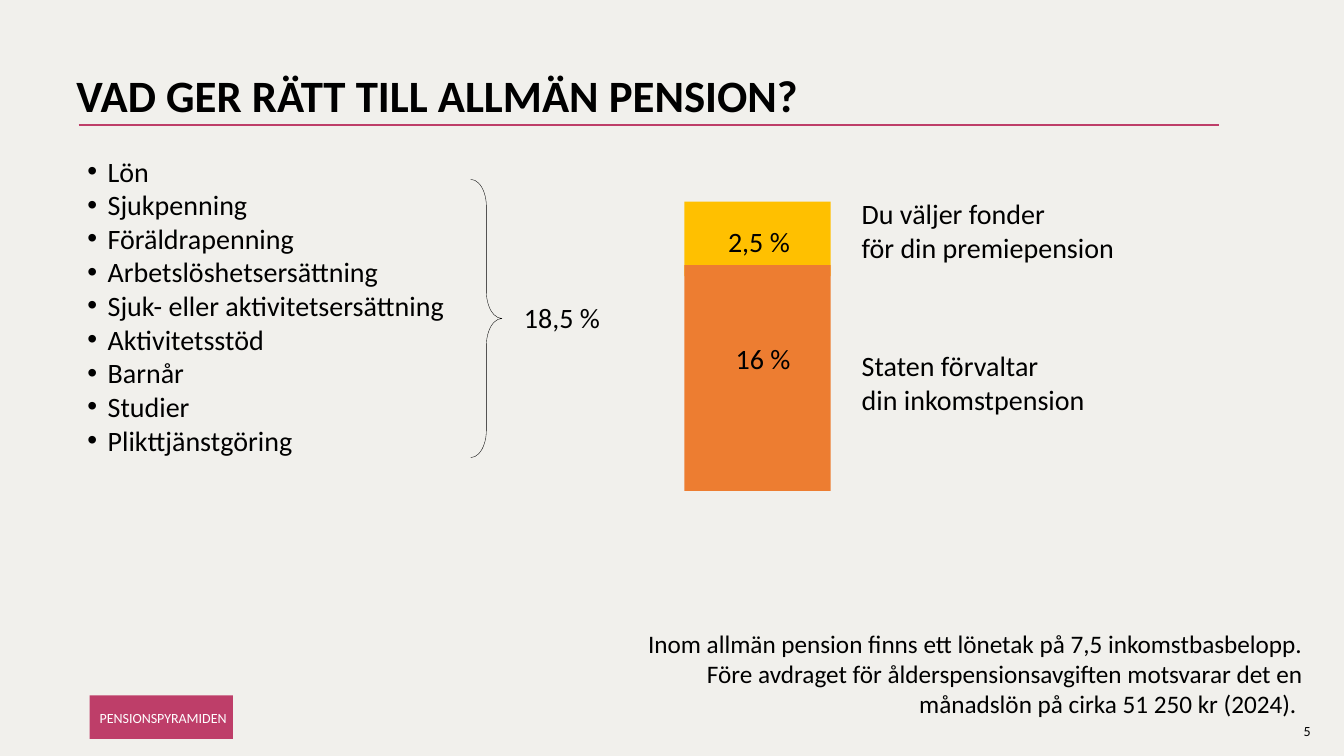
"""Build the slide on what earns a right to the public pension."""
from dataclasses import dataclass

from lxml import etree
from pptx import Presentation
from pptx.dml.color import RGBColor
from pptx.enum.shapes import MSO_CONNECTOR, MSO_SHAPE
from pptx.enum.text import MSO_ANCHOR, PP_ALIGN
from pptx.oxml.ns import qn
from pptx.util import Inches, Pt

LEFT, CENTER, RIGHT = PP_ALIGN.LEFT, PP_ALIGN.CENTER, PP_ALIGN.RIGHT
TOP, MIDDLE = MSO_ANCHOR.TOP, MSO_ANCHOR.MIDDLE
RECTANGLE, BRACE = MSO_SHAPE.RECTANGLE, MSO_SHAPE.RIGHT_BRACE
STRAIGHT = MSO_CONNECTOR.STRAIGHT

WIDTH, HEIGHT = Inches(13.33), Inches(7.5)
COLUMN, ROW = WIDTH / 40, HEIGHT / 30
BULLET_INDENT = Inches(0.2)


@dataclass(frozen=True)
class Theme:
    """Colours, font and type sizes of the slide."""

    font: str = "Calibri"
    background: str = "F1F0EC"
    ink: str = "000000"
    light: str = "FFFFFF"
    accent: str = "BE3E69"
    premium: str = "FFC000"
    income: str = "ED7D31"
    title: int = 32
    body: int = 20
    note: int = 18
    small: int = 10


THEME = Theme()

INCOME_SOURCES = (
    "Lön",
    "Sjukpenning",
    "Föräldrapenning",
    "Arbetslöshetsersättning",
    "Sjuk- eller aktivitetsersättning",
    "Aktivitetsstöd",
    "Barnår",
    "Studier",
    "Plikttjänstgöring",
)
PENSION_PARTS = (
    (THEME.premium, (20.37, 8, 4.35, 2.96)),
    (THEME.income, (20.37, 10.52, 4.35, 8.96)),
)
PART_CAPTIONS = (
    (("Du väljer fonder", "för din premiepension"), (25.35, 7.6, 9.48, 3.08)),
    (("Staten förvaltar", "din inkomstpension"), (25.35, 13.64, 10.05, 3.08)),
)
PART_SHARES = (
    ("2,5 %", (20.82, 8.72, 3.54, 1.76)),
    ("16 %", (20.82, 13.36, 3.78, 1.76)),
)
SALARY_CAP = (
    "Inom allmän pension finns ett lönetak på 7,5 inkomstbasbelopp. "
    "Före avdraget för ålderspensionsavgiften motsvarar det en "
    "månadslön på cirka 51 250 kr (2024). "
)


def place(area):
    """Turn columns and rows into slide lengths."""
    left, top, width, height = area
    return (round(left * COLUMN), round(top * ROW),
            round(width * COLUMN), round(height * ROW))


def apply(target, values):
    """Set every named format value on the target."""
    for name, value in values.items():
        setattr(target, name, value)


def add_bullet(paragraph):
    """Give the paragraph a hanging bullet."""
    properties = paragraph._p.get_or_add_pPr()
    properties.set("marL", str(BULLET_INDENT))
    properties.set("indent", str(-BULLET_INDENT))
    etree.SubElement(properties, qn("a:buFont")).set("typeface", "Arial")
    etree.SubElement(properties, qn("a:buChar")).set("char", "•")


def write(frame, lines, size=THEME.body, color=THEME.ink, bold=False,
          align=LEFT, spacing=1.0, bulleted=False):
    """Write one paragraph for each line of text."""
    for index, line in enumerate(lines):
        paragraph = frame.add_paragraph() if index else frame.paragraphs[0]
        if bulleted:
            add_bullet(paragraph)
        apply(paragraph, {"alignment": align, "line_spacing": spacing})
        run = paragraph.add_run()
        run.text = line
        apply(run.font, {"name": THEME.font, "size": Pt(size), "bold": bold})
        run.font.color.rgb = RGBColor.from_string(color)


def add_text(slide, area, *lines, **style):
    """Add a wrapping text box anchored at its top."""
    frame = slide.shapes.add_textbox(*place(area)).text_frame
    apply(frame, {"word_wrap": True, "vertical_anchor": TOP})
    write(frame, lines, **style)


def add_block(slide, area, color):
    """Add a plain filled rectangle without outline."""
    block = slide.shapes.add_shape(RECTANGLE, *place(area))
    block.shadow.inherit = False
    block.fill.solid()
    block.fill.fore_color.rgb = RGBColor.from_string(color)
    block.line.fill.background()
    return block


def add_tag(slide, area, label):
    """Add the section tag with its label."""
    frame = add_block(slide, area, THEME.accent).text_frame
    apply(frame, {
        "word_wrap": False,
        "vertical_anchor": MIDDLE,
        "margin_left": Inches(0.1),
        "margin_top": Inches(0.08),
        "margin_right": Inches(0.04),
        "margin_bottom": Inches(0.05),
    })
    write(frame, [label], size=THEME.small, color=THEME.light, spacing=0.9)


def add_rule(slide, left, right, height):
    """Add the horizontal rule below the title."""
    start, level, length, _ = place((left, height, right - left, 0))
    rule = slide.shapes.add_connector(
        STRAIGHT, start, level, start + length, level)
    rule.line.color.rgb = RGBColor.from_string(THEME.accent)
    rule.line.width = Pt(1.5)
    etree.SubElement(rule._element.spPr, qn("a:effectLst"))


def add_brace(slide, area):
    """Add the brace that sums up the income sources."""
    brace = slide.shapes.add_shape(BRACE, *place(area))
    brace.shadow.inherit = False
    brace.fill.background()
    brace.line.color.rgb = RGBColor.from_string(THEME.ink)
    brace.line.width = Pt(0.25)
    brace.adjustments[0] = 0.87
    brace.adjustments[1] = 0.5


def main():
    """Build and save the slide."""
    deck = Presentation()
    apply(deck, {"slide_width": WIDTH, "slide_height": HEIGHT})
    slide = deck.slides.add_slide(deck.slide_layouts[6])
    slide.background.fill.solid()
    slide.background.fill.fore_color.rgb = RGBColor.from_string(THEME.background)

    add_text(slide, (38.5, 28.48, 1.2, 1.08), "5", size=THEME.small)
    add_rule(slide, 2.34, 36.27, 4.96)
    add_text(slide, (1.98, 2.72, 34.5, 5.8), "VAD GER RÄTT TILL ALLMÄN PENSION?",
             size=THEME.title, bold=True, spacing=0.9)
    add_tag(slide, (2.67, 27.6, 4.26, 1.72), "PENSIONSPYRAMIDEN")
    add_text(slide, (2.31, 5.92, 23.67, 11.04), *INCOME_SOURCES, bulleted=True)

    for color, area in PENSION_PARTS:
        add_block(slide, area, color)
    for caption, area in PART_CAPTIONS:
        add_text(slide, area, *caption)
    for share, area in PART_SHARES:
        add_text(slide, area, share, align=CENTER)

    add_brace(slide, (14.01, 7.12, 0.93, 11.04))
    add_text(slide, (15.3, 11.72, 3.18, 1.76), "18,5 %")
    add_text(slide, (18.12, 24.72, 20.94, 4.04), SALARY_CAP,
             size=THEME.note, align=RIGHT)
    deck.save("out.pptx")


if __name__ == "__main__":
    main()
